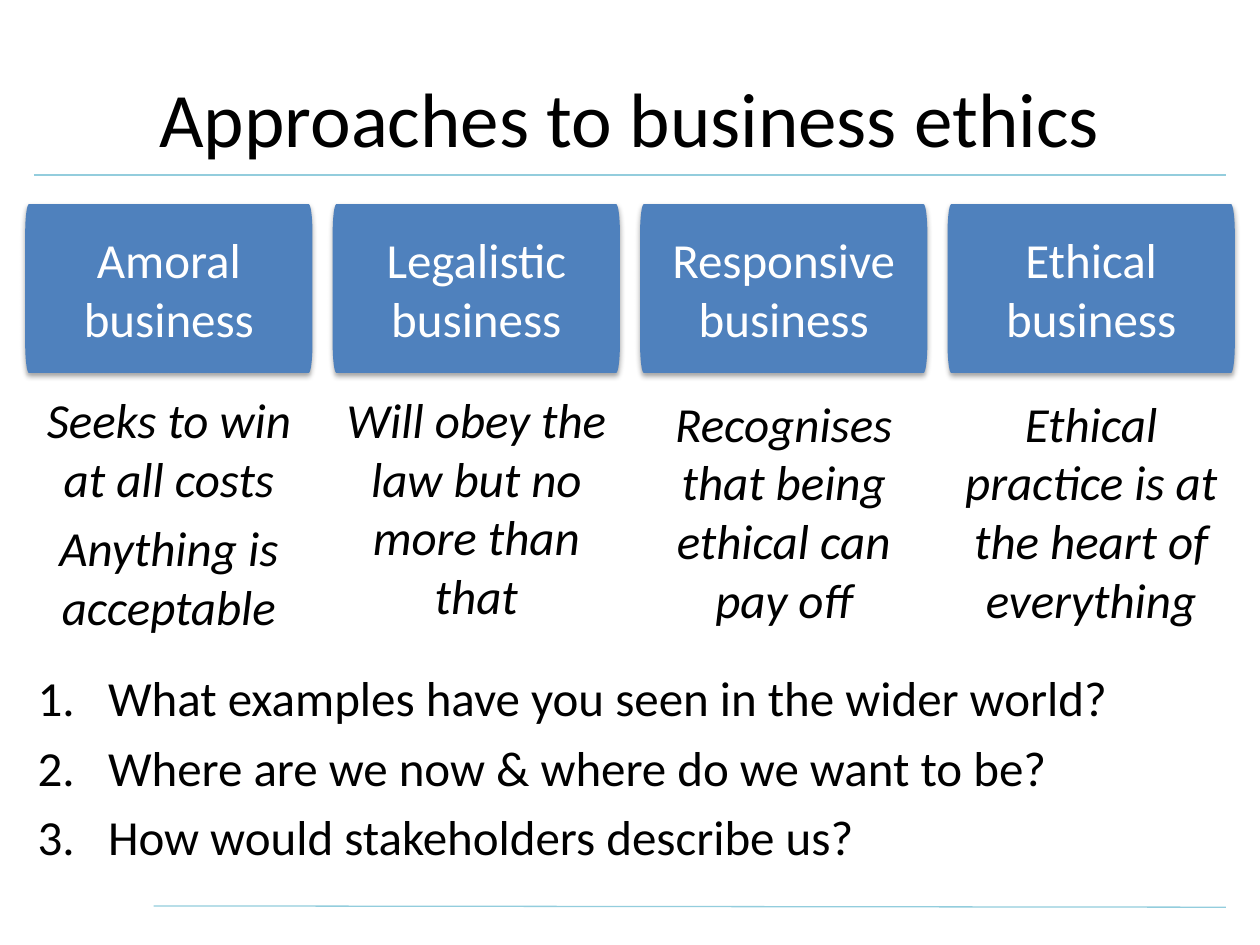
from lxml.etree import SubElement
from pptx import Presentation
from pptx.dml.color import RGBColor
from pptx.enum.text import MSO_ANCHOR as Anchor, MSO_AUTO_SIZE as AutoSize, PP_ALIGN as Align
from pptx.oxml.ns import qn
from pptx.util import Inches, Pt

BLACK = RGBColor(0x00, 0x00, 0x00)
WHITE = RGBColor(0xFF, 0xFF, 0xFF)
BLUE = RGBColor(0x4F, 0x81, 0xBD)
PALE_BLUE = RGBColor(0x93, 0xCD, 0xDD)

FONT = "Calibri"
WIDTH, HEIGHT = 10, 7.5
MARGIN, GAP = 0.2, 0.16
COLUMNS = 4
COLUMN_WIDTH = (WIDTH - 2 * MARGIN - (COLUMNS - 1) * GAP) / COLUMNS
CARD_TOP, CARD_HEIGHT = 1.62, 1.34
CORNER_X, CORNER_Y, ROUNDNESS = 0.03, 0.23, 0.55

RULES = [(1.22, 7.19, 9.73, 7.2), (0.27, 1.39, 9.73, 1.39)]
APPROACHES = [
    ("Amoral business", ["Seeks to win at all costs", "Anything is acceptable"], 3.04, 2.07),
    ("Legalistic business", ["Will obey the law but no more than that"], 3.04, 1.99),
    ("Responsive business", ["Recognises that being ethical can pay off"], 3.07, 1.99),
    ("Ethical business", ["Ethical practice is at the heart of everything"], 3.07, 1.99),
]
QUESTIONS = [
    "What examples have you seen in the wider world?",
    "Where are we now & where do we want to be?",
    "How would stakeholders describe us?",
]


def write(frame, lines, size=28, color=BLACK, italic=False, align=Align.CENTER,
          after=6, anchor=Anchor.TOP, numbered=False):
    """Fill a text frame with one paragraph per line."""
    frame.word_wrap = True
    frame.vertical_anchor = anchor
    for index, line in enumerate(lines):
        paragraph = frame.add_paragraph() if index else frame.paragraphs[0]
        paragraph.alignment = align
        paragraph.space_after = Pt(after)
        if numbered:
            properties = paragraph._p.get_or_add_pPr()
            properties.set("marL", str(Inches(0.56)))
            properties.set("indent", str(-Inches(0.56)))
            SubElement(properties, qn("a:buFont"), typeface="+mj-lt")
            SubElement(properties, qn("a:buAutoNum"), type="arabicPeriod")
        run = paragraph.add_run()
        run.text = line
        run.font.name, run.font.size = FONT, Pt(size)
        run.font.italic, run.font.color.rgb = italic, color


def add_text(slide, box, lines, grow=True, **style):
    """Place a text box in the given box."""
    frame = slide.shapes.add_textbox(*map(Inches, box)).text_frame
    write(frame, lines, **style)
    if grow:
        frame.auto_size = AutoSize.SHAPE_TO_FIT_TEXT


def add_rule(slide, ends):
    """Draw a thin divider between two points."""
    rule = slide.shapes.add_connector(1, *map(Inches, ends))
    rule.line.color.rgb = PALE_BLUE
    rule.line.width = Pt(0.75)
    SubElement(rule._element.spPr, qn("a:effectLst"))


def round_corners(card):
    """Turn every second straight segment of a card's outline into a curve."""
    outline = card._element.spPr
    points = [(int(pt.get("x")), int(pt.get("y"))) for pt in outline.iter(qn("a:pt"))]
    corners = [(0, 0), (card.width, 0), (card.width, card.height), (0, card.height)]
    cuts = list(outline.iter(qn("a:lnTo")))[::2]
    for cut, corner, start, end in zip(cuts, corners, points[::2], points[1::2]):
        curve = cut.getparent().makeelement(qn("a:cubicBezTo"))
        handles = [[round(a + ROUNDNESS * (b - a)) for a, b in zip(tip, corner)]
                   for tip in (start, end)]
        for x, y in (*handles, end):
            SubElement(curve, qn("a:pt"), x=str(x), y=str(y))
        cut.getparent().replace(cut, curve)


def add_card(slide, box, heading):
    """Draw a shadowed heading card in the given box."""
    left, top, width, height = box
    right, bottom = left + width, top + height
    outline = [(left, top + CORNER_Y), (left + CORNER_X, top),
               (right - CORNER_X, top), (right, top + CORNER_Y),
               (right, bottom - CORNER_Y), (right - CORNER_X, bottom),
               (left + CORNER_X, bottom), (left, bottom - CORNER_Y)]
    start, *rest = [(Inches(x), Inches(y)) for x, y in outline]
    builder = slide.shapes.build_freeform(*start)
    builder.add_line_segments(rest, close=True)
    card = builder.convert_to_shape()
    round_corners(card)
    card.fill.solid()
    card.fill.fore_color.rgb = BLUE
    card.line.fill.background()
    card.shadow.inherit = False
    effects = card._element.spPr.find(qn("a:effectLst"))
    shadow = SubElement(effects, qn("a:outerShdw"), blurRad=str(Pt(3.1)), dist=str(Pt(1.8)),
                        dir="5400000", rotWithShape="0")
    shade = SubElement(shadow, qn("a:srgbClr"), val=str(BLACK))
    SubElement(shade, qn("a:alpha"), val="35000")
    frame = card.text_frame
    frame.margin_left = frame.margin_right = Inches(0.13)
    frame.margin_top = frame.margin_bottom = Inches(0.13)
    write(frame, [heading], color=WHITE, after=12, anchor=Anchor.MIDDLE)


def add_approaches(slide, left, top):
    """Lay out the heading cards with their descriptions below."""
    for column, (heading, description, text_top, text_height) in enumerate(APPROACHES):
        x = left + column * (COLUMN_WIDTH + GAP)
        add_card(slide, (x, top, COLUMN_WIDTH, CARD_HEIGHT), heading)
        add_text(slide, (x, text_top, COLUMN_WIDTH, text_height), description, italic=True)


def main():
    """Build and save the slide."""
    deck = Presentation()
    deck.slide_width, deck.slide_height = Inches(WIDTH), Inches(HEIGHT)
    slide = deck.slides.add_slide(deck.slide_layouts[6])
    for ends in RULES:
        add_rule(slide, ends)
    add_text(slide, (0.5, 0.3, 9, 1.25), ["Approaches to business ethics"],
             grow=False, size=44, after=0, anchor=Anchor.MIDDLE)
    add_approaches(slide, MARGIN, CARD_TOP)
    add_text(slide, (MARGIN, 5.25, WIDTH - 2 * MARGIN, 1.68), QUESTIONS,
             align=Align.LEFT, numbered=True)
    deck.save("out.pptx")


if __name__ == "__main__":
    main()
